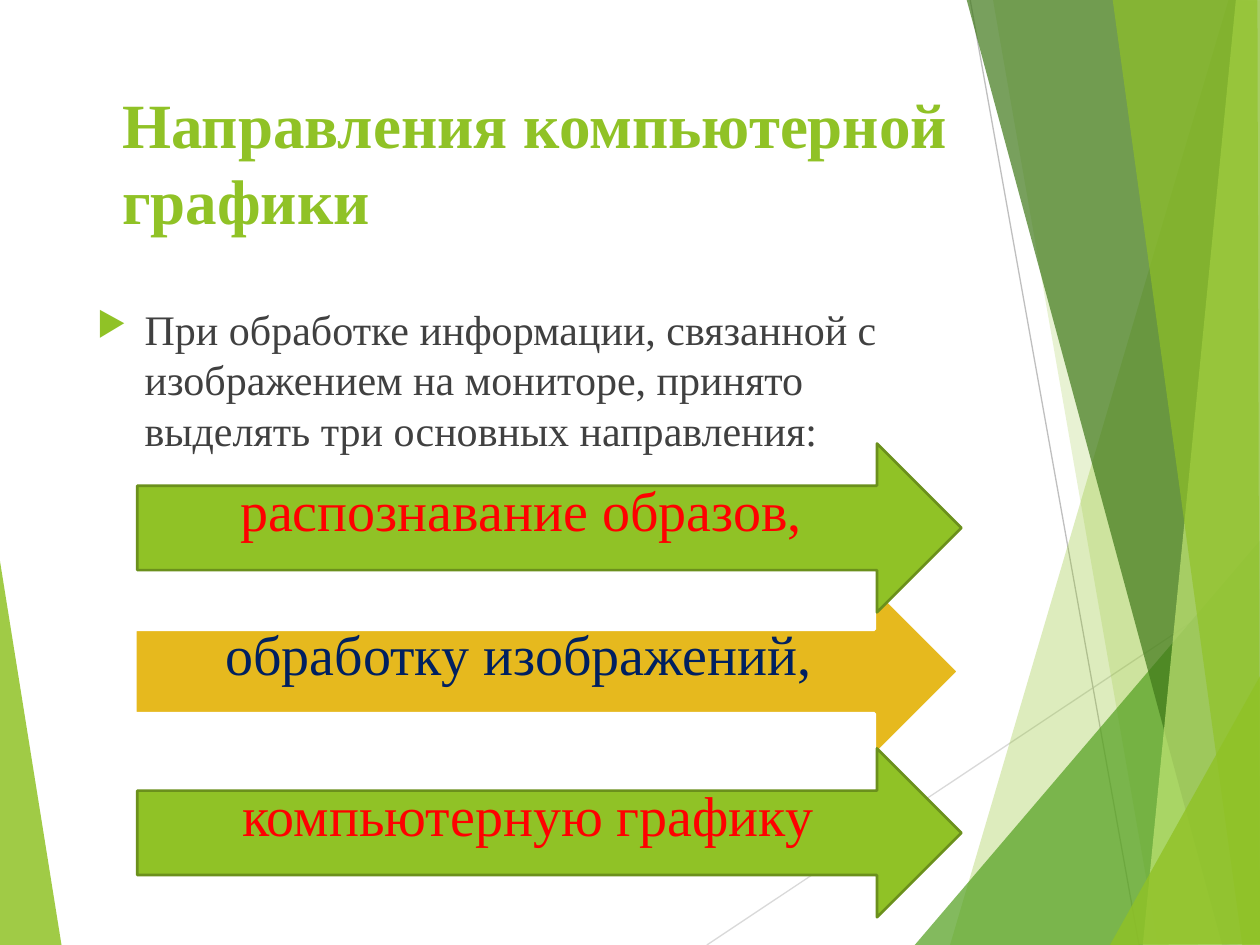
"""Build a slide on the directions of computer graphics with a faceted green backdrop."""
from lxml.etree import SubElement
from pptx import Presentation
from pptx.dml.color import RGBColor
from pptx.enum.shapes import MSO_CONNECTOR as CONN, MSO_SHAPE as SHAPE
from pptx.enum.text import MSO_ANCHOR as ANCHOR, PP_ALIGN as ALIGN
from pptx.oxml.ns import qn
from pptx.util import Inches, Pt

GREEN = "90C226"
FACETS = [
    (GREEN, 30, [(9.75, 0), (7.54, 7.5), (10.02, 7.51), (10.01, 0.01)]),
    (GREEN, 20, [(7.88, -0.01), (9.19, 7.5), (10.01, 7.5), (10.01, -0.01)]),
    ("54A021", 72, [(7.26, 7.5), (10, 4.29), (10.01, 7.5)]),
    ("3F7819", 70, [(7.67, -0.01), (9.7, 7.5), (10.01, 7.49), (10.01, -0.01)]),
    ("C0E474", 70, [(9.81, -0.01), (9.07, 7.5), (10.01, 7.5), (10, -0.01)]),
    (GREEN, 65, [(8.83, -0.01), (9.86, 7.5), (10, 7.5), (9.98, -0.01)]),
    (GREEN, 80, [(8.81, 7.5), (10.01, 5.35), (10.01, 7.49)]),
]
LEFT_FACET = (GREEN, 85, [(-0.01, 4.39), (0.49, 7.51), (-0.01, 7.5)])
RAYS = [((5.61, 7.5), (10.01, 4.57), "D9D9D9"), ((7.7, 0), (9.04, 7.5), "BFBFBF")]
GREEN_STYLE = (GREEN, "6B901C", 1.5, "FF0000")
GOLD_STYLE = ("E6B91E", "FFFFFF", 2, "002060")
ARROWS = [
    (1.07, 4.66, "обработку изображений, ", GOLD_STYLE),
    (1.09, 5.94, "компьютерную графику", GREEN_STYLE),
    (1.09, 3.52, "распознавание образов, ", GREEN_STYLE),
]


def rgb(value):
    return RGBColor.from_string(value)


def write(p, text, size, color, bold=False, align=ALIGN.LEFT, font="Times New Roman"):
    p.alignment = align
    r = p.add_run()
    r.text = text
    r.font.name, r.font.size, r.font.bold = font, Pt(size), bold
    r.font.color.rgb = rgb(color)


class Deck:
    def __init__(self):
        self.prs = Presentation()
        self.prs.slide_width, self.prs.slide_height = Inches(10), Inches(7.5)
        self.s = self.prs.slides.add_slide(self.prs.slide_layouts[5])

    def facet(self, color, opacity, points):
        pts = [(round(x * 100), round(y * 100)) for x, y in points]
        fb = self.s.shapes.build_freeform(*pts[0], scale=Inches(0.01))
        fb.add_line_segments(pts[1:], close=True)
        sp = fb.convert_to_shape()
        sp.shadow.inherit = False
        sp.line.fill.background()
        sp.fill.solid()
        sp.fill.fore_color.rgb = rgb(color)
        clr = sp.fill._xPr.find(qn("a:solidFill"))[0]
        SubElement(clr, qn("a:alpha"), val=str(opacity * 1000))

    def ray(self, start, end, color):
        ends = [Inches(v) for v in start + end]
        line = self.s.shapes.add_connector(CONN.STRAIGHT, *ends)
        line.line.color.rgb = rgb(color)
        line.line.width = Pt(0.75)
        SubElement(line._element.spPr, qn("a:effectLst"))

    def title(self, text):
        sp = self.s.shapes.title
        sp.left, sp.top, sp.width, sp.height = map(Inches, (0.87, 0.56, 6.94, 1.44))
        sp.text_frame.vertical_anchor = ANCHOR.MIDDLE
        write(sp.text_frame.paragraphs[0], text, 36, GREEN, bold=True)

    def bullet(self, text):
        tf = self.s.shapes.add_textbox(*map(Inches, (0.67, 2.36, 6.94, 4.24))).text_frame
        tf.word_wrap = True
        p = tf.paragraphs[0]
        pPr = p._p.get_or_add_pPr()
        pPr.set("marL", str(Inches(0.38)))
        pPr.set("indent", str(Inches(-0.38)))
        SubElement(SubElement(pPr, qn("a:buClr")), qn("a:srgbClr"), val=GREEN)
        SubElement(pPr, qn("a:buSzPct"), val="80000")
        SubElement(pPr, qn("a:buChar"), char="▶")
        write(p, text, 24, "404040")

    def arrow(self, left, top, text, style):
        fill, line, width, color = style
        box = map(Inches, (left, top, 6.54, 1.34))
        sp = self.s.shapes.add_shape(SHAPE.RIGHT_ARROW, *box)
        sp.shadow.inherit = False
        sp.fill.solid()
        sp.fill.fore_color.rgb = rgb(fill)
        sp.line.color.rgb = rgb(line)
        sp.line.width = Pt(width)
        tf = sp.text_frame
        tf.word_wrap = True
        tf.vertical_anchor = ANCHOR.MIDDLE
        tf.margin_bottom = Inches(0.34)
        write(tf.paragraphs[0], text, 32, color, align=ALIGN.CENTER)


def main():
    deck = Deck()
    deck.facet(*LEFT_FACET)
    for ray in RAYS:
        deck.ray(*ray)
    for facet in FACETS:
        deck.facet(*facet)
    deck.title("Направления компьютерной графики")
    deck.bullet("При обработке информации, связанной с изображением на мониторе, "
                "принято выделять три основных направления:")
    for arrow in ARROWS:
        deck.arrow(*arrow)
    deck.prs.save("out.pptx")


if __name__ == "__main__":
    main()
